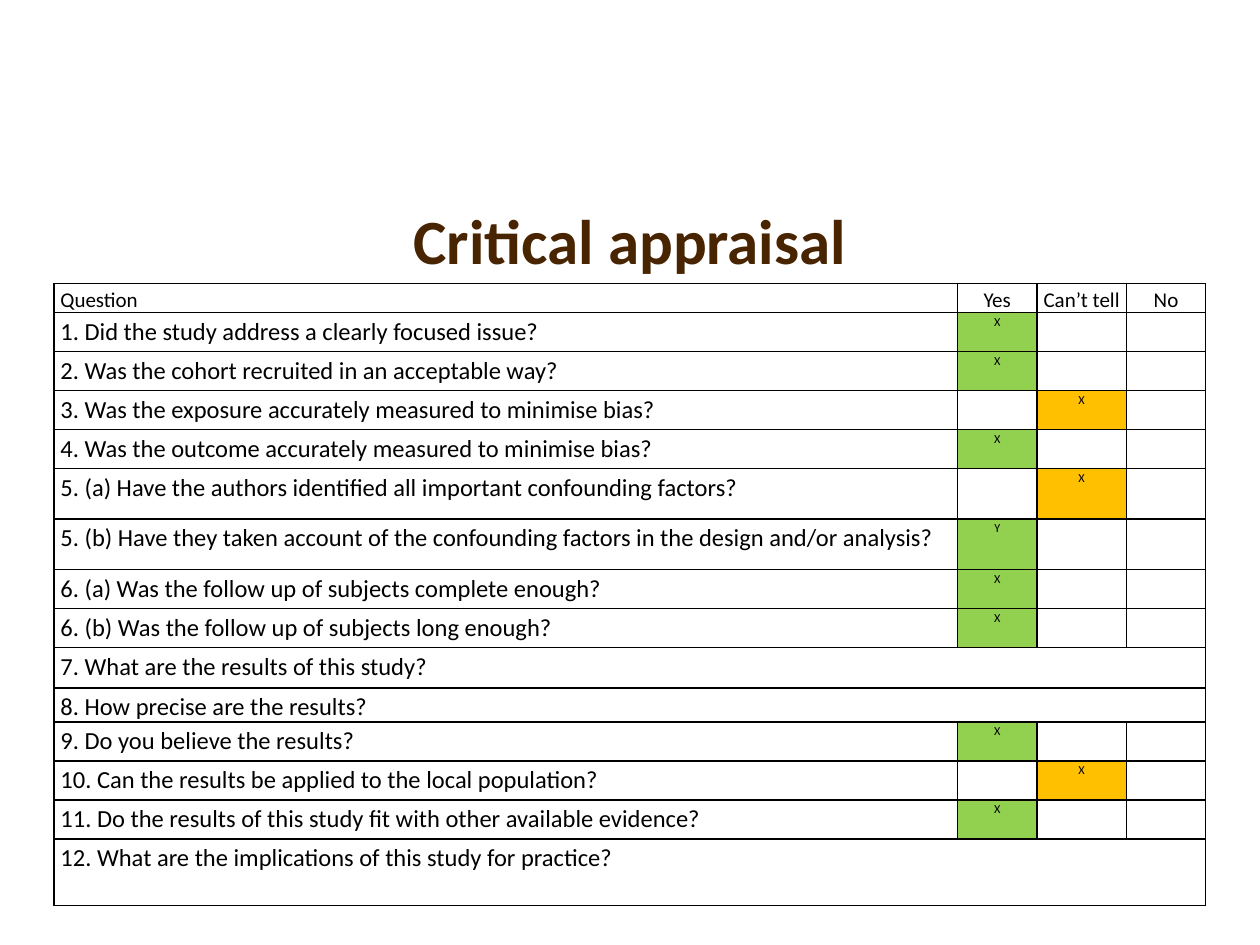
import pptx
import pptx.util
import pptx.dml.color
import pptx.enum.text
import pptx.oxml.xmlchemy
from lxml import etree
from pptx.util import Inches

COLOURS = {"title": "482400", "ink": "000000", "yes": "92D050", "unsure": "FFC000"}
FONT = "Calibri"
ALIGN = pptx.enum.text.PP_ALIGN
DRAWING_NS = "http://schemas.openxmlformats.org/drawingml/2006/main"

HEADINGS = ["Question", "Yes", "Can’t tell", "No"]
COLUMN_WIDTHS = [7.17, 0.63, 0.71, 0.63]
ANSWER_COLUMNS = {"yes": 1, "unsure": 2}
HEADING_HEIGHT = 0.23

# Question, answer (None for an open question), mark, row height
QUESTIONS = [
    ("1. Did the study address a clearly focused issue?", "yes", "X", 0.31),
    ("2. Was the cohort recruited in an acceptable way?", "yes", "X", 0.31),
    ("3. Was the exposure accurately measured to minimise bias?", "unsure", "X", 0.31),
    ("4. Was the outcome accurately measured to minimise bias?", "yes", "X", 0.31),
    ("5. (a) Have the authors identified all important confounding factors?", "unsure", "X", 0.4),
    ("5. (b) Have they taken account of the confounding factors in the design and/or analysis?",
     "yes", "Y", 0.4),
    ("6. (a) Was the follow up of subjects complete enough?", "yes", "X", 0.31),
    ("6. (b) Was the follow up of subjects long enough?", "yes", "X", 0.31),
    ("7. What are the results of this study?", None, "", 0.32),
    ("8. How precise are the results?", None, "", 0.27),
    ("9. Do you believe the results?", "yes", "X", 0.31),
    ("10. Can the results be applied to the local population?", "unsure", "X", 0.31),
    ("11. Do the results of this study fit with other available evidence?", "yes", "X", 0.31),
    ("12. What are the implications of this study for practice?", None, "", 0.53),
]


def rgb(name):
    return pptx.dml.color.RGBColor.from_string(COLOURS[name])


def write(text_frame, text, size, colour="ink", align=ALIGN.LEFT, bold=False):
    paragraph = text_frame.paragraphs[0]
    paragraph.text = text
    paragraph.alignment = align
    for run in paragraph.runs:
        run.font.name = FONT
        run.font.size = pptx.util.Pt(size)
        run.font.bold = bold
        run.font.color.rgb = rgb(colour)
    return paragraph


def write_cell(cell, text, size, align=ALIGN.LEFT):
    write(cell.text_frame, text, size, align=align).line_spacing = 1.15


def prepare_cell(cell):
    """Give a cell narrow margins, no fill and a thin border on each side."""
    cell.margin_left = cell.margin_right = Inches(0.05)
    cell.margin_top = cell.margin_bottom = 0
    cell.fill.background()
    properties = cell._tc.get_or_add_tcPr()
    for position, side in enumerate(("lnL", "lnR", "lnT", "lnB")):
        border = etree.fromstring(
            f'<a:{side} xmlns:a="{DRAWING_NS}" w="{pptx.util.Pt(1)}"><a:solidFill>'
            f'<a:srgbClr val="{COLOURS["ink"]}"/></a:solidFill></a:{side}>')
        properties.insert(position, border)


def add_title(slide):
    title = slide.shapes.add_textbox(Inches(0.5), Inches(1.27), Inches(9), Inches(1.25))
    title.text_frame.word_wrap = True
    title.text_frame.vertical_anchor = pptx.enum.text.MSO_ANCHOR.MIDDLE
    write(title.text_frame, "Critical appraisal", 36, "title", ALIGN.CENTER, bold=True)


def add_checklist(slide):
    heights = [HEADING_HEIGHT] + [height for *_, height in QUESTIONS]
    checklist = slide.shapes.add_table(
        len(heights), len(COLUMN_WIDTHS), Inches(0.43), Inches(2.25),
        Inches(sum(COLUMN_WIDTHS)), Inches(sum(heights))).table
    checklist.first_row = checklist.horz_banding = False
    for column, width in zip(checklist.columns, COLUMN_WIDTHS):
        column.width = Inches(width)
    for row, height in zip(checklist.rows, heights):
        row.height = Inches(height)
    for cell in checklist.iter_cells():
        prepare_cell(cell)

    # Headings
    for index, heading in enumerate(HEADINGS):
        align = ALIGN.CENTER if index else ALIGN.LEFT
        write_cell(checklist.cell(0, index), heading, 12, align)

    # Questions with their marked answers
    for index, (question, answer, mark, _) in enumerate(QUESTIONS, start=1):
        question_cell = checklist.cell(index, 0)
        write_cell(question_cell, question, 14)
        if answer is None:
            question_cell.merge(checklist.cell(index, len(HEADINGS) - 1))
            continue
        answer_cell = checklist.cell(index, ANSWER_COLUMNS[answer])
        write_cell(answer_cell, mark, 7, ALIGN.CENTER)
        answer_cell.fill.solid()
        answer_cell.fill.fore_color.rgb = rgb(answer)


def main():
    presentation = pptx.Presentation()
    presentation.slide_width = Inches(10)
    presentation.slide_height = Inches(7.5)
    slide = presentation.slides.add_slide(presentation.slide_layouts[6])
    add_title(slide)
    add_checklist(slide)
    presentation.save("out.pptx")


if __name__ == "__main__":
    main()
